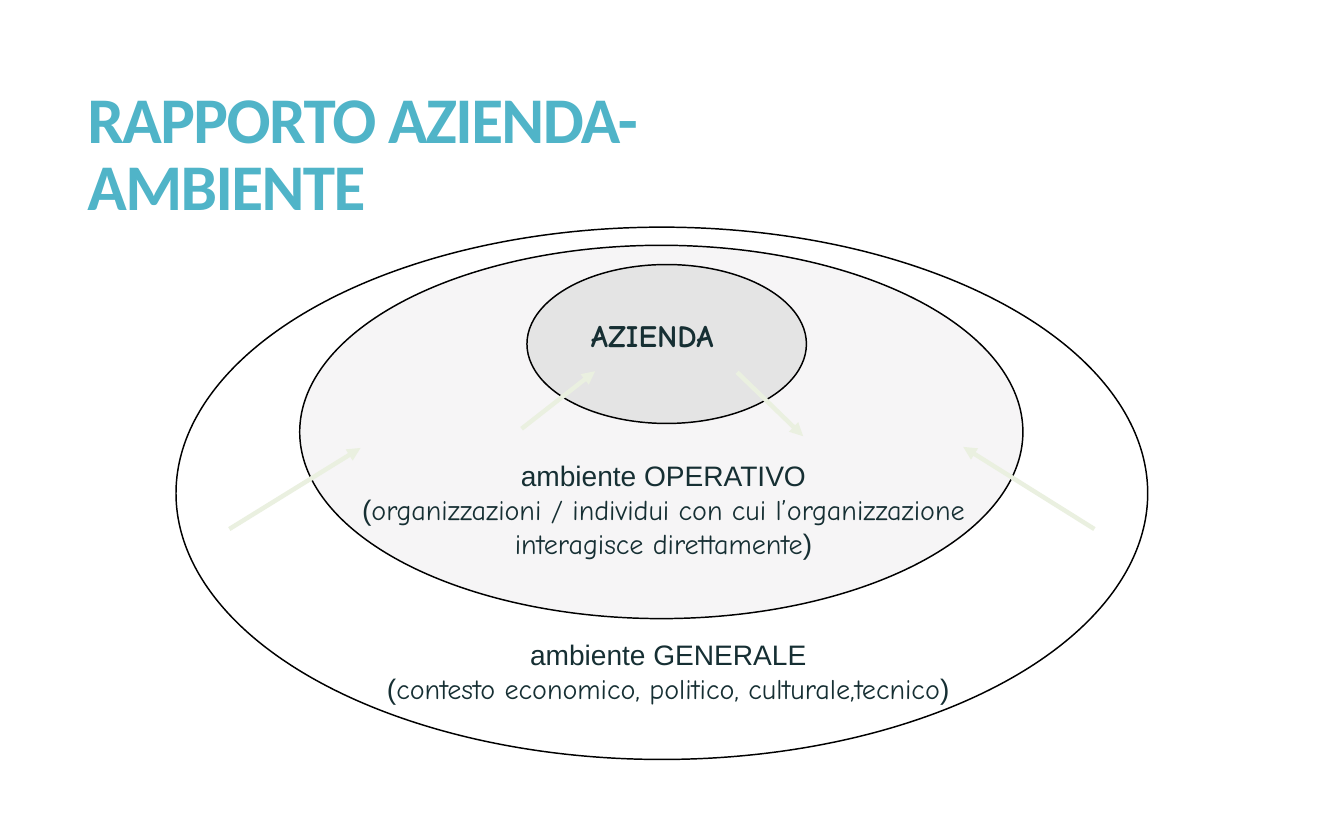
from lxml import etree
from pptx import Presentation
from pptx.dml.color import RGBColor
from pptx.enum import shapes, text
from pptx.oxml import ns
from pptx.util import Inches, Pt

COLORS = {
    "title": "50B4C8",
    "text": "162F33",
    "outline": "000000",
    "operating": "EEEDEF",
    "company": "E4E4E4",
    "arrow": "EAF0E0",
}

deck = Presentation()
deck.slide_width = Inches(12.6)
deck.slide_height = Inches(12.6 * 10 / 16)
slide = deck.slides.add_slide(deck.slide_layouts[6])


def add_ellipse(left, top, width, height, fill=None, alpha=None):
    ellipse = slide.shapes.add_shape(
        shapes.MSO_SHAPE.OVAL, Inches(left), Inches(top), Inches(width), Inches(height)
    )
    ellipse.shadow.inherit = False
    ellipse.line.color.rgb = RGBColor.from_string(COLORS["outline"])
    ellipse.line.width = Pt(1)
    if fill is None:
        ellipse.fill.background()
        return
    ellipse.fill.solid()
    ellipse.fill.fore_color.rgb = RGBColor.from_string(COLORS[fill])
    if alpha:
        tint = ellipse._element.spPr.find(ns.qn("a:solidFill"))[0]
        etree.SubElement(tint, ns.qn("a:alpha"), val=str(alpha * 1000))


def add_label(box, lines, size, color="text", bold=False, align=text.PP_ALIGN.CENTER):
    frame = slide.shapes.add_textbox(*(Inches(length) for length in box)).text_frame
    frame.word_wrap = True
    frame.margin_left = frame.margin_right = Inches(0.12)
    frame.margin_top = frame.margin_bottom = Inches(0.06)
    for index, line in enumerate(lines):
        paragraph = frame.add_paragraph() if index else frame.paragraphs[0]
        paragraph.alignment = align
        for words, font in line:
            run = paragraph.add_run()
            run.text = words
            run.font.name = font
            run.font.size = Pt(size)
            run.font.bold = bold
            run.font.color.rgb = RGBColor.from_string(COLORS[color])
    return frame


title = add_label(
    (0.7, 0.79, 7.57, 0.75), [[("RAPPORTO AZIENDA-AMBIENTE", "Calibri")]],
    44, "title", True, text.PP_ALIGN.LEFT,
).paragraphs[0]
title.line_spacing = 0.85
title.runs[0].font._element.set("spc", "-110")

add_label((3.23, 5.92, 6.07, 0.75), [
    [("ambiente GENERALE", "Arial")],
    [("(", "Arial"), ("contesto economico, politico, culturale,tecnico", "Comic Neue"),
     (")", "Arial")],
], 19)
add_ellipse(1.65, 2.13, 9.11, 4.99)

add_ellipse(2.81, 2.3, 6.78, 3.5, "operating", 50)
add_label((3.07, 4.24, 6.3, 1.07), [
    [("ambiente OPERATIVO", "Arial")],
    [("(", "Arial"), ("organizzazioni / individui con cui l’organizzazione", "Comic Neue")],
    [("interagisce direttamente", "Comic Neue"), (")", "Arial")],
], 19)

add_ellipse(4.94, 2.48, 2.62, 1.49, "company")
add_label((5.42, 2.91, 1.65, 0.47), [[("AZIENDA", "Comic Neue")]],
          21, bold=True, align=text.PP_ALIGN.LEFT)

for start_x, start_y, tip_x, tip_y in [
    (4.89, 4.02, 5.58, 3.48),
    (6.91, 3.49, 7.53, 4.09),
    (10.26, 4.96, 9.03, 4.19),
    (2.15, 4.96, 3.38, 4.2),
]:
    arrow = slide.shapes.add_connector(
        shapes.MSO_CONNECTOR.STRAIGHT,
        Inches(start_x), Inches(start_y), Inches(tip_x), Inches(tip_y),
    )
    arrow.line.color.rgb = RGBColor.from_string(COLORS["arrow"])
    arrow.line.width = Pt(3)
    etree.SubElement(arrow.line._get_or_add_ln(), ns.qn("a:tailEnd"), type="triangle")
    etree.SubElement(arrow._element.spPr, ns.qn("a:effectLst"))

deck.save("out.pptx")
